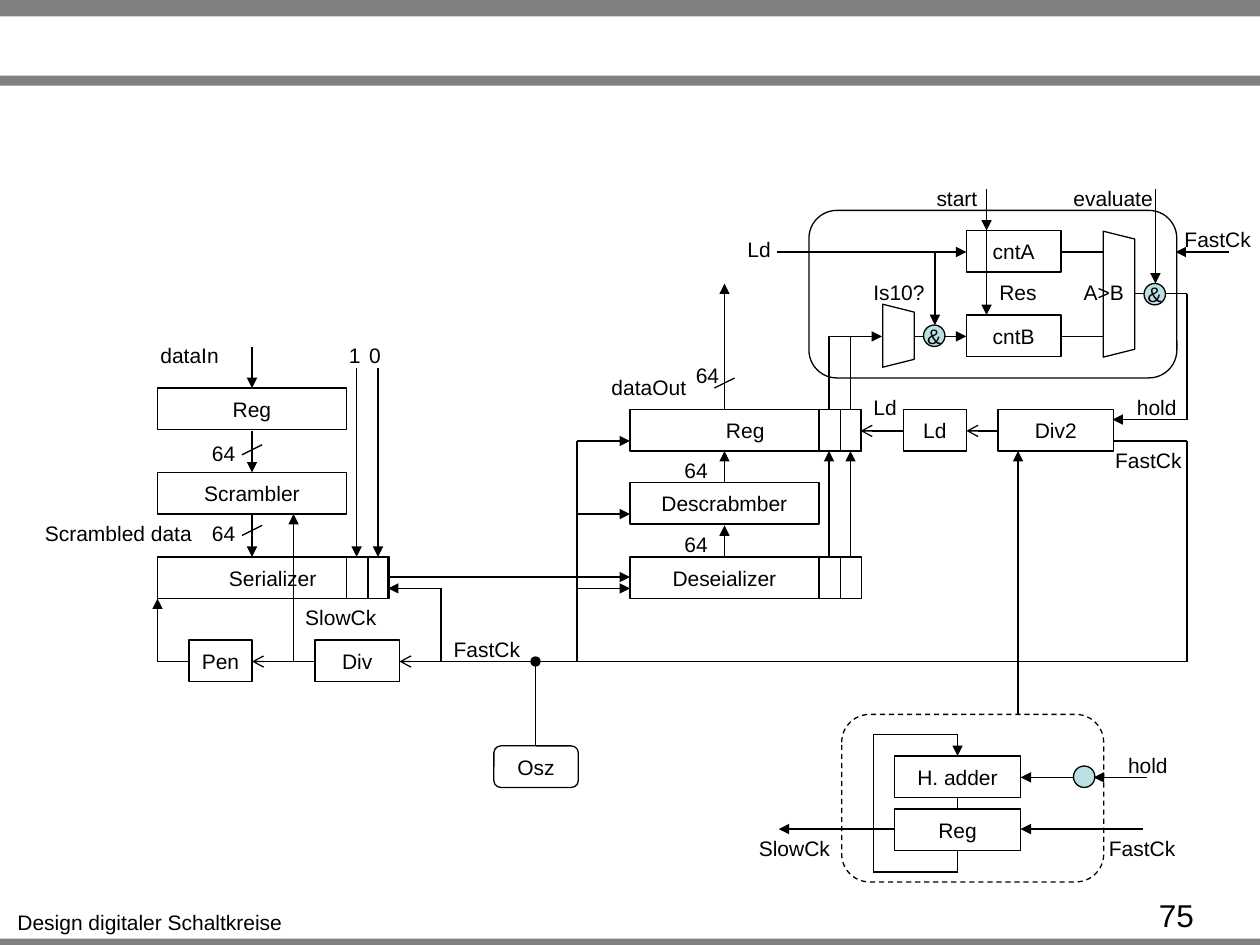
import pptx
import pptx.dml.color
import pptx.enum.dml
import pptx.enum.shapes
import pptx.enum.text
import pptx.oxml.ns
import pptx.util
from lxml import etree
from pptx.util import Inches

BLACK = pptx.dml.color.RGBColor(0x00, 0x00, 0x00)
GRAY = pptx.dml.color.RGBColor(0x80, 0x80, 0x80)
GATE_BLUE = pptx.dml.color.RGBColor(0xBB, 0xE0, 0xE3)
SHAPE = pptx.enum.shapes.MSO_SHAPE
ALIGN = pptx.enum.text.PP_ALIGN
LINE_WIDTH = pptx.util.Pt(0.75)
BOX_HEIGHT = 0.33
BIT_WIDTH = 0.17
LABEL_HEIGHT = 0.3

prs = pptx.Presentation()
prs.slide_width, prs.slide_height = Inches(10), Inches(7.5)
slide = prs.slides.add_slide(prs.slide_layouts[6])


def write(shape, text, size=12, align=ALIGN.CENTER):
    paragraph = shape.text_frame.paragraphs[0]
    paragraph.alignment = align
    run = paragraph.add_run()
    run.text = text
    run.font.size = pptx.util.Pt(size)
    run.font.name = "Arial"
    run.font.color.rgb = BLACK


def outline(kind, left, top, width, height, text="", fill=None):
    """Add a thin black outlined shape, unfilled unless a fill is given."""
    shape = slide.shapes.add_shape(
        kind, Inches(left), Inches(top), Inches(width), Inches(height))
    shape.shadow.inherit = False
    shape.line.color.rgb = BLACK
    shape.line.width = LINE_WIDTH
    if fill is None:
        shape.fill.background()
    else:
        shape.fill.solid()
        shape.fill.fore_color.rgb = fill
    if text:
        frame = shape.text_frame
        frame.word_wrap = False
        frame.vertical_anchor = pptx.enum.text.MSO_ANCHOR.MIDDLE
        write(shape, text)
    return shape


# Page bars
for top, height in [(7.45, 0.08), (0, 0.13), (0.6, 0.08)]:
    bar = slide.shapes.add_shape(
        SHAPE.RECTANGLE, 0, Inches(top), Inches(10), Inches(height))
    bar.shadow.inherit = False
    bar.fill.solid()
    bar.fill.fore_color.rgb = GRAY
    bar.line.fill.background()

# Circuit blocks: text, left, top, width
blocks = [
    ("Reg", 1.25, 3.08, 1.5), ("Scrambler", 1.25, 3.75, 1.5),
    ("Serializer", 1.25, 4.42, 1.83), ("Pen", 1.5, 5.08, 0.5),
    ("Div", 2.5, 5.08, 0.67),
    ("Reg", 5, 3.25, 1.83), ("Descrabmber", 5, 3.83, 1.5),
    ("Deseializer", 5, 4.42, 1.5), ("Ld", 7.17, 3.25, 0.5),
    ("Div2", 7.92, 3.25, 0.92),
    ("cntA", 7.67, 1.83, 0.75), ("cntB", 7.67, 2.5, 0.75),
    ("H. adder", 7.1, 6, 1), ("Reg", 7.1, 6.42, 1),
]
for name, left, top, width in blocks:
    outline(SHAPE.RECTANGLE, left, top, width, BOX_HEIGHT, name)

# The two header bits at the end of each register
for left, top in [(2.75, 4.42), (6.5, 4.42), (6.5, 3.25)]:
    for bit in range(2):
        outline(SHAPE.RECTANGLE, left + bit * BIT_WIDTH, top, BIT_WIDTH, BOX_HEIGHT)

# Header check and comparator
for left, top, width in [(6.88, 2.54, 0.5), (8.38, 2.21, 1)]:
    outline(SHAPE.TRAPEZOID, left, top, width, 0.25).rotation = 90

# Oscillator and enclosing frames
outline(SHAPE.ROUNDED_RECTANGLE, 3.92, 5.92, 0.67, BOX_HEIGHT, "Osz")
outline(SHAPE.ROUNDED_RECTANGLE, 6.42, 1.67, 2.92, 1.33)
divider_frame = outline(SHAPE.ROUNDED_RECTANGLE, 6.68, 5.67, 2.08, 1.33)
divider_frame.line.dash_style = pptx.enum.dml.MSO_LINE.DASH

# Wires by arrowhead: (head, tail) -> x1, y1, x2, y2
wires = {
    (None, None): [
        # bus width strokes
        (2.08, 3.53, 1.92, 3.61), (2.08, 4.17, 1.92, 4.25), (5.83, 3, 5.67, 3.08),
        # clock distribution
        (4.25, 5.25, 4.25, 5.92), (4.25, 5.25, 9.42, 5.25), (9.42, 3.5, 9.42, 5.25),
        (8.83, 3.5, 9.42, 3.5), (3.5, 5.25, 3.5, 4.67), (1.5, 5.25, 1.25, 5.25),
        (4.58, 5.25, 4.58, 3.5),
        # header check and counters
        (6.58, 3.25, 6.58, 2.67), (6.75, 3.25, 6.75, 2.67), (8.42, 2, 8.75, 2),
        (8.42, 2.67, 8.75, 2.67), (9, 2.33, 9.08, 2.33), (9.25, 2.33, 9.42, 2.33),
        (9.42, 2.33, 9.42, 3.33),
        # divider feedback
        (7.6, 6.75, 7.6, 6.92), (7.6, 6.92, 6.93, 6.92), (6.93, 5.83, 6.93, 6.92),
        (7.6, 5.83, 6.93, 5.83), (7.6, 6.33, 7.6, 6.42),
    ],
    (None, "triangle"): [
        # transmitter
        (2, 2.75, 2, 3.08), (2, 3.42, 2, 3.75), (2, 4.08, 2, 4.42),
        (2.83, 2.92, 2.83, 4.42), (3, 2.92, 3, 4.42), (3.5, 4.67, 3.08, 4.67),
        (1.25, 5.25, 1.25, 4.75), (2.33, 5.25, 2.33, 4.08), (3.08, 4.58, 5, 4.58),
        # receiver
        (4.58, 3.5, 5, 3.5), (4.58, 4.08, 5, 4.08), (4.58, 4.67, 5, 4.67),
        (5.75, 4.42, 5.75, 4.17), (5.75, 3.83, 5.75, 3.58), (5.75, 3.25, 5.75, 2.25),
        (6.58, 4.42, 6.58, 3.58), (6.75, 4.42, 6.75, 3.58), (9.42, 3.33, 8.83, 3.33),
        (8.08, 5.67, 8.08, 3.58),
        # header check and counters
        (6.58, 2.67, 7, 2.67), (7.25, 2.67, 7.67, 2.67), (6.17, 2, 7.67, 2),
        (7.42, 2, 7.42, 2.58), (7.83, 1.5, 7.83, 1.83), (7.83, 1.83, 7.83, 2.5),
        (9.17, 1.5, 9.17, 2.25), (9.75, 2, 9.33, 2),
        # divider
        (8.52, 6.17, 8.1, 6.17), (9.1, 6.17, 8.68, 6.17), (9.07, 6.58, 8.1, 6.58),
        (7.1, 6.58, 6.18, 6.58), (7.6, 5.83, 7.6, 6),
    ],
    (None, "arrow"): [
        (7.92, 3.42, 7.67, 3.42), (7.17, 3.42, 6.83, 3.42), (2.5, 5.25, 2, 5.25),
    ],
    ("oval", "arrow"): [(4.25, 5.25, 3.17, 5.25)],
}
for (head, tail), routes in wires.items():
    for route in routes:
        wire = slide.shapes.add_connector(
            pptx.enum.shapes.MSO_CONNECTOR.STRAIGHT, *[Inches(value) for value in route])
        wire.line.color.rgb = BLACK
        wire.line.width = LINE_WIDTH
        line_xml = wire.line._get_or_add_ln()
        for tag, kind in [("a:headEnd", head), ("a:tailEnd", tail)]:
            if kind:
                etree.SubElement(line_xml, pptx.oxml.ns.qn(tag), type=kind)
        etree.SubElement(wire._element.spPr, pptx.oxml.ns.qn("a:effectLst"))

# Gates
for left, top, symbol in [(7.33, 2.58, "&"), (9.08, 2.25, "&"), (8.52, 6.08, "")]:
    outline(SHAPE.OVAL, left, top, 0.17, 0.17, symbol, GATE_BLUE)

# Signal names: text, left, top, width
labels = [
    ("Design digitaler Schaltkreise", 0.03, 7.17, 2.32),
    ("dataIn", 1.17, 2.67, 0.67), ("1", 2.67, 2.67, 0.29), ("0", 2.83, 2.67, 0.29),
    ("64", 1.58, 3.45, 0.39), ("64", 1.58, 4.08, 0.39),
    ("Scrambled data", 0.25, 4.08, 1.38), ("SlowCk", 2.32, 4.75, 0.77),
    ("FastCk", 3.5, 5, 0.73),
    ("dataOut", 4.75, 2.92, 0.8), ("64", 5.42, 2.83, 0.39),
    ("64", 5.33, 3.58, 0.39), ("64", 5.33, 4.17, 0.39), ("Ld", 6.83, 3.08, 0.39),
    ("hold", 8.92, 3.08, 0.52), ("FastCk", 8.75, 3.5, 0.73),
    ("Ld", 5.83, 1.83, 0.39), ("Is10?", 6.83, 2.17, 0.61), ("start", 7.33, 1.42, 0.53),
    ("Res", 7.83, 2.17, 0.5), ("A>B", 8.5, 2.17, 0.52),
    ("evaluate", 8.42, 1.42, 0.83), ("FastCk", 9.3, 1.75, 0.73),
    ("hold", 8.85, 5.92, 0.52), ("FastCk", 8.7, 6.58, 0.73), ("SlowCk", 5.92, 6.58, 0.77),
]
for name, left, top, width in labels:
    label = slide.shapes.add_textbox(
        Inches(left), Inches(top), Inches(width), Inches(LABEL_HEIGHT))
    label.text_frame.word_wrap = False
    write(label, name)

page_number = slide.shapes.add_textbox(Inches(9.1), Inches(7.06), Inches(0.87), Inches(0.24))
page_number.text_frame.word_wrap = True
write(page_number, "75", 18, ALIGN.LEFT)

prs.save("out.pptx")
